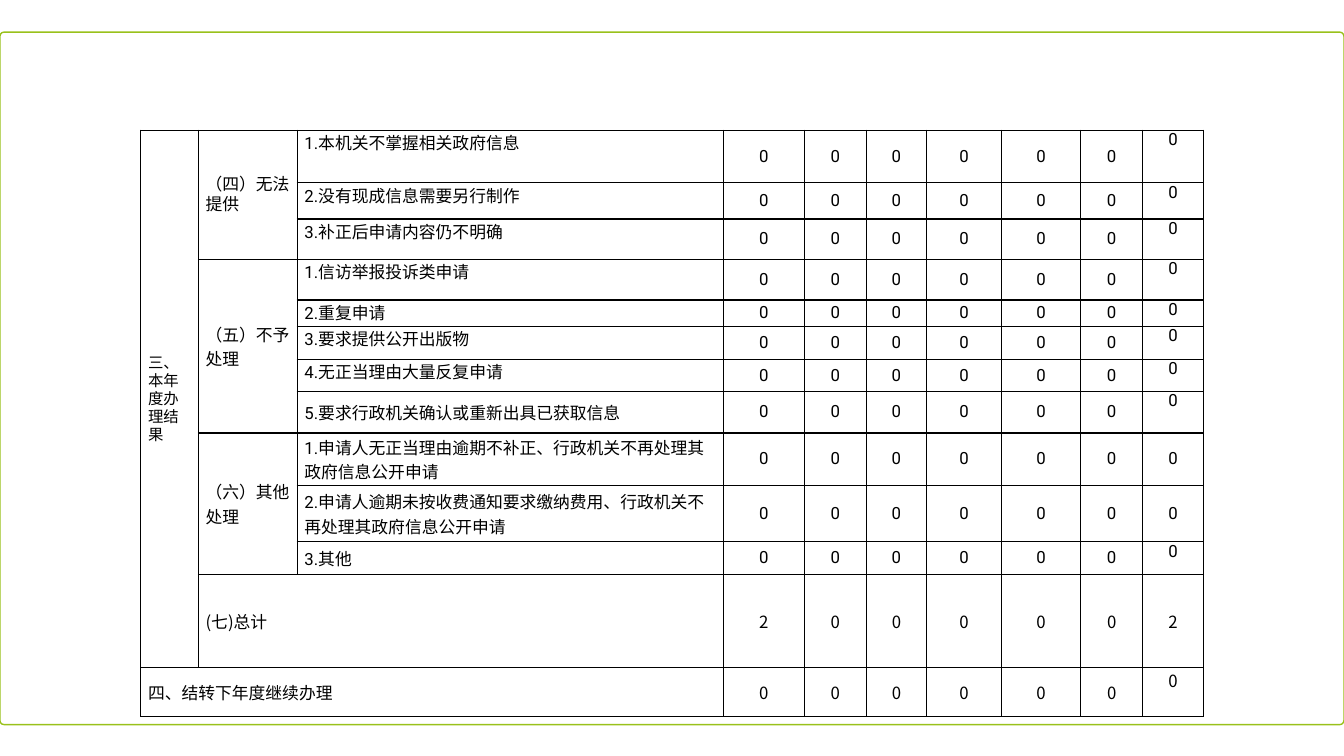
from lxml import etree
from pptx import Presentation
from pptx.dml.color import RGBColor
from pptx.enum.shapes import MSO_SHAPE
from pptx.enum.text import MSO_ANCHOR, PP_ALIGN
from pptx.oxml.ns import qn
from pptx.util import Cm, Pt

ROUNDED = MSO_SHAPE.ROUNDED_RECTANGLE
TOP, MIDDLE = MSO_ANCHOR.TOP, MSO_ANCHOR.MIDDLE
LEFT, CENTER = PP_ALIGN.LEFT, PP_ALIGN.CENTER

COLORS = {"white": "FFFFFF", "green": "99C11B", "black": "000000"}
LATIN_FONT = "Roboto"
CHINESE_FONT = "Noto Sans CJK SC"

COLUMN_WIDTHS = [1.45, 2.49, 10.74, 2.04, 1.56, 1.52, 1.89, 1.99, 1.57, 1.52]
ROW_HEIGHTS = [1.32, 0.92, 1.01, 1.03, 0.66, 0.83, 0.81, 1.05, 1.32, 1.42, 0.83, 2.35, 1.23]
FIRST_COUNT_COLUMN = 3
TOTAL_ROW, CARRIED_ROW = 11, 12
TIGHT_SPACING = 0.8

RESULT_LABEL = "三、本年度办理结果"
GROUPS = [
    ("（四）无法提供", [
        "1.本机关不掌握相关政府信息",
        "2.没有现成信息需要另行制作",
        "3.补正后申请内容仍不明确",
    ]),
    ("（五）不予处理", [
        "1.信访举报投诉类申请",
        "2.重复申请",
        "3.要求提供公开出版物",
        "4.无正当理由大量反复申请",
        "5.要求行政机关确认或重新出具已获取信息",
    ]),
    ("（六）其他处理", [
        "1.申请人无正当理由逾期不补正、行政机关不再处理其政府信息公开申请",
        "2.申请人逾期未按收费通知要求缴纳费用、行政机关不再处理其政府信息公开申请",
        "3.其他",
    ]),
]
TOP_ITEM_ROWS = range(7)
MIDDLE_SUM_ROWS = (8, 9, TOTAL_ROW)
ZERO_COUNTS = ["0"] * 7
TOTAL_COUNTS = ["2", "0", "0", "0", "0", "0", "2"]


def color(name):
    """Return the named colour."""
    return RGBColor.from_string(COLORS[name])


def write_text(cell, text, size=12, font=LATIN_FONT, align=LEFT, anchor=MIDDLE, spacing=None):
    """Write one formatted paragraph into a cell."""
    cell.vertical_anchor = anchor
    paragraph = cell.text_frame.paragraphs[0]
    paragraph.alignment = align
    paragraph.line_spacing = spacing
    run = paragraph.add_run()
    run.text = text
    run.font.size = Pt(size)
    run.font.name = font
    run.font.color.rgb = color("black")
    east_asian = etree.SubElement(run.font._element, qn("a:ea"))
    east_asian.set("typeface", CHINESE_FONT)


def style_cell(cell):
    """Give a cell its margins, no fill and a thin border on every side."""
    cell.margin_left = cell.margin_right = Cm(0.18)
    cell.margin_top = cell.margin_bottom = 0
    cell.fill.background()
    properties = cell._tc.get_or_add_tcPr()
    for position, side in enumerate(("a:lnL", "a:lnR", "a:lnT", "a:lnB")):
        line = etree.Element(qn(side), w=str(Pt(1)))
        fill = etree.SubElement(line, qn("a:solidFill"))
        etree.SubElement(fill, qn("a:srgbClr"), val=COLORS["black"])
        properties.insert(position, line)


def add_frame(slide, left, top, width, height):
    """Draw the rounded panel behind the table."""
    frame = slide.shapes.add_shape(ROUNDED, Cm(left), Cm(top), Cm(width), Cm(height))
    frame.adjustments[0] = 0.006
    frame.shadow.inherit = False
    frame.fill.solid()
    frame.fill.fore_color.rgb = color("white")
    fill_color = frame._element.spPr.find(qn("a:solidFill")).find(qn("a:srgbClr"))
    etree.SubElement(fill_color, qn("a:alpha"), val="90000")
    frame.line.color.rgb = color("green")
    frame.line.width = Pt(1)


def fill_labels(table):
    """Merge the category columns and return their text by cell position."""
    labels = {
        (0, 0): RESULT_LABEL,
        (TOTAL_ROW, 1): "(七)总计",
        (CARRIED_ROW, 0): "四、结转下年度继续办理",
    }
    table.cell(0, 0).merge(table.cell(TOTAL_ROW, 0))
    table.cell(TOTAL_ROW, 1).merge(table.cell(TOTAL_ROW, 2))
    table.cell(CARRIED_ROW, 0).merge(table.cell(CARRIED_ROW, 2))
    row = 0
    for group, items in GROUPS:
        labels[row, 1] = group
        table.cell(row, 1).merge(table.cell(row + len(items) - 1, 1))
        for item in items:
            labels[row, 2] = item
            row += 1
    return labels


def add_results_table(slide, left, top, width, height):
    """Build the table of handling results, keeping labels merged from the first row tight so rows do not grow."""
    table = slide.shapes.add_table(
        len(ROW_HEIGHTS), len(COLUMN_WIDTHS), Cm(left), Cm(top), Cm(width), Cm(height)
    ).table
    table.first_row = table.horz_banding = False
    for column, column_width in zip(table.columns, COLUMN_WIDTHS):
        column.width = Cm(column_width)
    for row, row_height in zip(table.rows, ROW_HEIGHTS):
        row.height = Cm(row_height)

    labels = fill_labels(table)
    last_column = len(COLUMN_WIDTHS) - 1
    for row in range(len(ROW_HEIGHTS)):
        font = CHINESE_FONT if row >= TOTAL_ROW else LATIN_FONT
        counts = TOTAL_COUNTS if row == TOTAL_ROW else ZERO_COUNTS
        for column in range(len(COLUMN_WIDTHS)):
            cell = table.cell(row, column)
            style_cell(cell)
            if column >= FIRST_COUNT_COLUMN:
                at_top = column == last_column and row not in MIDDLE_SUM_ROWS
                text, align = counts[column - FIRST_COUNT_COLUMN], CENTER
            else:
                at_top = column == 2 and row in TOP_ITEM_ROWS
                text, align = labels.get((row, column), ""), LEFT
            write_text(
                cell, text, size=11 if text == RESULT_LABEL else 12, font=font,
                align=align, anchor=TOP if at_top else MIDDLE,
                spacing=TIGHT_SPACING if row == 0 and column < 2 else None,
            )


def main():
    """Create the presentation and save it."""
    presentation = Presentation()
    presentation.slide_width = Cm(33.87)
    presentation.slide_height = Cm(19.05)
    slide = presentation.slides.add_slide(presentation.slide_layouts[6])
    add_frame(slide, 0, 0.81, 33.87, 17.45)
    add_results_table(slide, 3.55, 3.28, sum(COLUMN_WIDTHS), sum(ROW_HEIGHTS))
    presentation.save("out.pptx")


if __name__ == "__main__":
    main()
